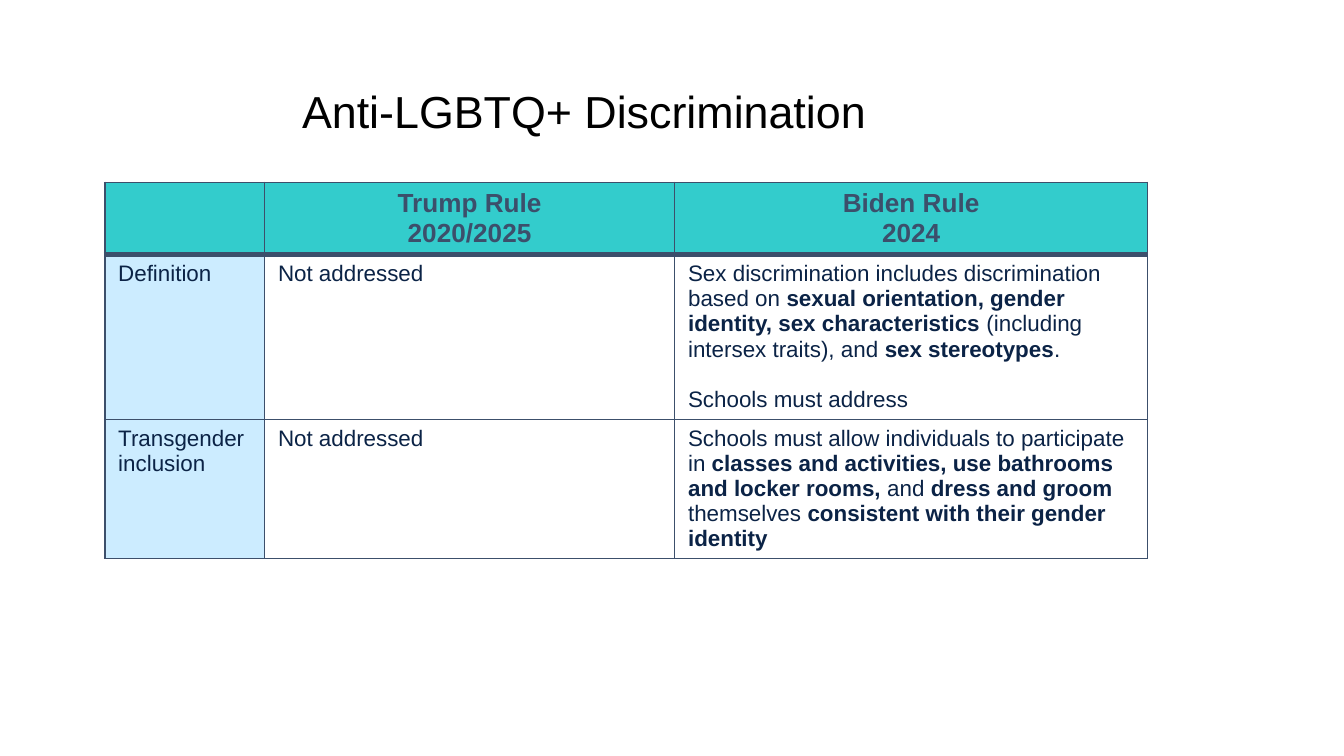
"""Build a slide with a table that compares two rules on discrimination."""
from lxml.etree import SubElement
from pptx import Presentation
from pptx.dml.color import RGBColor
from pptx.enum.text import PP_ALIGN
from pptx.oxml.ns import qn
from pptx.util import Cm, Pt

BLACK = RGBColor(0x00, 0x00, 0x00)
WHITE = RGBColor(0xFF, 0xFF, 0xFF)
NAVY = RGBColor(0x0B, 0x23, 0x46)
SLATE = RGBColor(0x3C, 0x4F, 0x6B)
TEAL = RGBColor(0x33, 0xCC, 0xCC)
SKY = RGBColor(0xCC, 0xEC, 0xFF)

TITLE = {"name": "Arial", "size": Pt(24), "bold": False}
HEAD = {"name": "Arial", "size": Pt(14), "bold": True}
BODY = {"name": "Arial", "size": Pt(12), "bold": False}
GAP = Pt(13.8)

WIDTHS = (3.02, 7.75, 8.94)
HEIGHTS = (1.36, 3.1, 2.63)
ROWS = (
    ((), ("Trump Rule", "2020/2025"), ("Biden Rule", "2024")),
    (
        ("Definition",),
        ("Not addressed",),
        (
            "Sex discrimination includes discrimination based on "
            "**sexual orientation, gender identity, sex characteristics**"
            " (including intersex traits), and **sex stereotypes**.",
            "Schools must address",
        ),
    ),
    (
        ("Transgender inclusion",),
        ("Not addressed",),
        (
            "Schools must allow individuals to participate in "
            "**classes and activities, use bathrooms and locker rooms,** and "
            "**dress and groom **themselves** consistent with their gender identity**",
        ),
    ),
)


def style_font(font, style, color):
    for key, value in style.items():
        setattr(font, key, value)
    font.color.rgb = color


def write_text(frame, lines, style, color, align, gap=0):
    for i, line in enumerate(lines):
        para = frame.paragraphs[0] if i == 0 else frame.add_paragraph()
        para.alignment = align
        para.space_before = gap if i else 0
        for j, part in enumerate(line.split("**")):
            if part:
                run = para.add_run()
                run.text = part
                style_font(run.font, style, color)
                run.font.bold = style["bold"] or j % 2 == 1


def set_border(cell, widths):
    props = cell._tc.get_or_add_tcPr()
    for side, width in widths.items():
        line = SubElement(props, qn(f"a:ln{side}"), w=str(Pt(width)))
        fill = SubElement(line, qn("a:solidFill"))
        SubElement(fill, qn("a:srgbClr"), val=str(SLATE))


def fill_cell(cell, color):
    cell.fill.solid()
    cell.fill.fore_color.rgb = color


def add_title(slide, text):
    box = slide.shapes.add_textbox(Cm(5.21), Cm(1.45), Cm(11.89), Cm(1.27))
    box.text_frame.word_wrap = True
    write_text(box.text_frame, [text], TITLE, BLACK, PP_ALIGN.CENTER)


def add_rules(slide):
    frame = slide.shapes.add_table(
        len(HEIGHTS), len(WIDTHS), Cm(1.98), Cm(3.45), Cm(sum(WIDTHS)), Cm(sum(HEIGHTS))
    )
    table = frame.table
    for col, width in zip(table.columns, WIDTHS):
        col.width = Cm(width)
    for row, height in zip(table.rows, HEIGHTS):
        row.height = Cm(height)
    for r, row in enumerate(ROWS):
        for c, lines in enumerate(row):
            cell = table.cell(r, c)
            set_border(cell, {"L": 1, "R": 1, "T": 3 if r == 1 else 1, "B": 1 if r else 3})
            if r == 0:
                fill_cell(cell, TEAL)
                write_text(cell.text_frame, lines, HEAD, SLATE, PP_ALIGN.CENTER)
            else:
                fill_cell(cell, WHITE if c else SKY)
                write_text(cell.text_frame, lines, BODY, NAVY, PP_ALIGN.LEFT, GAP)


def main():
    deck = Presentation()
    deck.slide_width, deck.slide_height = Cm(25.4), Cm(14.29)
    slide = deck.slides.add_slide(deck.slide_layouts[6])
    add_rules(slide)
    add_title(slide, "Anti-LGBTQ+ Discrimination ")
    deck.save("out.pptx")


if __name__ == "__main__":
    main()
